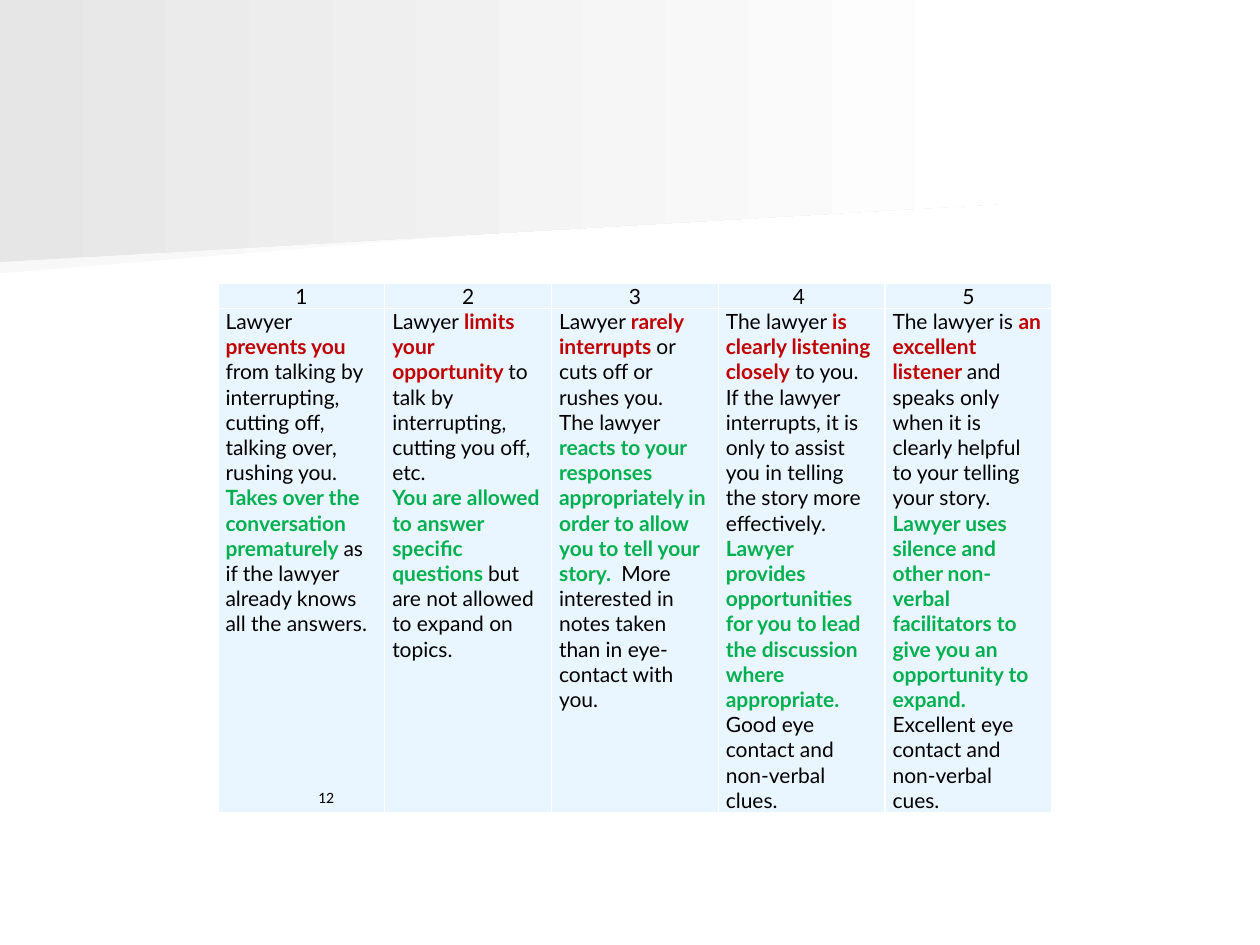
from dataclasses import dataclass
from lxml.etree import SubElement
from pptx import Presentation
from pptx.dml.color import RGBColor
from pptx.enum.text import MSO_ANCHOR, PP_ALIGN
from pptx.oxml import parse_xml
from pptx.oxml.ns import nsdecls, qn
from pptx.slide import Slide
from pptx.table import _Cell
from pptx.text.text import _Paragraph
from pptx.util import Inches, Pt

BLACK, RED, GREEN, WHITE = "000000", "C00000", "00B050", "FFFFFF"
CELL_FILL = "EAF6FF"
TABLE_LEFT, TABLE_TOP, TABLE_WIDTH = 1.73, 2.25, 6.62
ROW_HEIGHTS = (0.2, 4.0)


@dataclass(frozen=True)
class Phrase:
    text: str
    color: str = BLACK


@dataclass(frozen=True)
class Rating:
    label: str
    paragraphs: tuple[tuple[Phrase, ...], ...]


@dataclass(frozen=True)
class Band:
    points: tuple[tuple[float, float], ...]
    start_color: str


BANDS = (
    Band(((0, 1.01), (7.79, 1.01), (7.78, 1.53), (0, 2.17)), "F8F8F8"),
    Band(((0, 0), (7.92, 0), (7.92, 1.62), (0, 2.08)), "E6E6E6"),
)

RATINGS = (
    Rating("1", (
        (Phrase("Lawyer "), Phrase("prevents you", RED),
         Phrase(" from talking by interrupting, cutting off, talking over, rushing you.")),
        (Phrase("Takes over the conversation prematurely ", GREEN),
         Phrase("as if the lawyer already knows all the answers.")),
    )),
    Rating("2", (
        (Phrase("Lawyer "), Phrase("limits your opportunity ", RED),
         Phrase("to talk by interrupting, cutting you off, etc.")),
        (Phrase("You are allowed to answer specific questions ", GREEN),
         Phrase("but are not allowed to expand on topics.")),
    )),
    Rating("3", (
        (Phrase("Lawyer "), Phrase("rarely interrupts ", RED),
         Phrase("or cuts off or rushes you.")),
        (Phrase("The lawyer "),
         Phrase("reacts to your responses appropriately in order to allow "
                "you to tell your story.  ", GREEN),
         Phrase("More interested in notes taken than in eye-contact with you.")),
    )),
    Rating("4 ", (
        (Phrase("The lawyer "), Phrase("is clearly listening closely", RED),
         Phrase(" to you.")),
        (Phrase("If the lawyer interrupts, it is only to assist you in telling "
                "the story more effectively."),),
        (Phrase("Lawyer provides opportunities for you to lead the discussion "
                "where appropriate.", GREEN),),
        (Phrase("Good eye contact and non-verbal clues."),),
    )),
    Rating("5", (
        (Phrase("The lawyer is "), Phrase("an excellent listener ", RED),
         Phrase("and speaks only when it is clearly helpful to your telling your story.  "),
         Phrase("Lawyer uses silence and other non-verbal facilitators to give you "
                "an opportunity to expand.", GREEN)),
        (Phrase("Excellent eye contact and non-verbal cues."),),
    )),
)


def rgb(value: str) -> RGBColor:
    return RGBColor.from_string(value)


def draw_band(slide: Slide, band: Band) -> None:
    points = [(Inches(x), Inches(y)) for x, y in band.points]
    builder = slide.shapes.build_freeform(*points[0])
    builder.add_line_segments(points[1:], close=True)
    shape = builder.convert_to_shape()
    shape.shadow.inherit = False
    shape.line.fill.background()
    shape.fill.gradient()
    shape.fill.gradient_angle = 0
    for stop, color in zip(shape.fill.gradient_stops, (band.start_color, WHITE)):
        stop.color.rgb = rgb(color)


def write_phrases(paragraph: _Paragraph, phrases: tuple[Phrase, ...],
                  size: float = 12, font: str = "Lato") -> None:
    for phrase in phrases:
        run = paragraph.add_run()
        run.text = phrase.text
        run.font.size = Pt(size)
        run.font.name = font
        run.font.bold = phrase.color != BLACK
        run.font.color.rgb = rgb(phrase.color)


def style_cell(cell: _Cell) -> None:
    cell.margin_left = cell.margin_right = Inches(0.06)
    cell.margin_top = cell.margin_bottom = 0
    cell.fill.solid()
    cell.fill.fore_color.rgb = rgb(CELL_FILL)
    properties = cell._tc.get_or_add_tcPr()
    for position, side in enumerate("LRTB"):
        border = parse_xml(f'<a:ln{side} {nsdecls("a")} w="{Pt(1)}"/>')
        fill = SubElement(border, qn("a:solidFill"))
        SubElement(fill, qn("a:srgbClr"), val=WHITE)
        properties.insert(position, border)


def draw_ratings(slide: Slide, ratings: tuple[Rating, ...]) -> None:
    table = slide.shapes.add_table(
        len(ROW_HEIGHTS), len(ratings), Inches(TABLE_LEFT), Inches(TABLE_TOP),
        Inches(TABLE_WIDTH), Inches(sum(ROW_HEIGHTS))).table
    table.first_row = table.horz_banding = False
    for row, height in zip(table.rows, ROW_HEIGHTS):
        row.height = Inches(height)
    for column, rating in enumerate(ratings):
        heading, description = table.cell(0, column), table.cell(1, column)
        style_cell(heading)
        style_cell(description)
        heading.text_frame.paragraphs[0].alignment = PP_ALIGN.CENTER
        write_phrases(heading.text_frame.paragraphs[0], (Phrase(rating.label),))
        for index, phrases in enumerate(rating.paragraphs):
            frame = description.text_frame
            paragraph = frame.add_paragraph() if index else frame.paragraphs[0]
            write_phrases(paragraph, phrases)


def draw_page_number(slide: Slide, number: str) -> None:
    frame = slide.shapes.add_textbox(
        Inches(1.63), Inches(6.19), Inches(1.12), Inches(0.26)).text_frame
    frame.word_wrap = True
    frame.vertical_anchor = MSO_ANCHOR.BOTTOM
    frame.paragraphs[0].alignment = PP_ALIGN.RIGHT
    write_phrases(frame.paragraphs[0], (Phrase(number),), 9, "Calibri")


def main() -> None:
    presentation = Presentation()
    presentation.slide_width, presentation.slide_height = Inches(10), Inches(7.5)
    slide = presentation.slides.add_slide(presentation.slide_layouts[6])
    for band in BANDS:
        draw_band(slide, band)
    draw_ratings(slide, RATINGS)
    draw_page_number(slide, "12")
    presentation.save("out.pptx")


if __name__ == "__main__":
    main()
